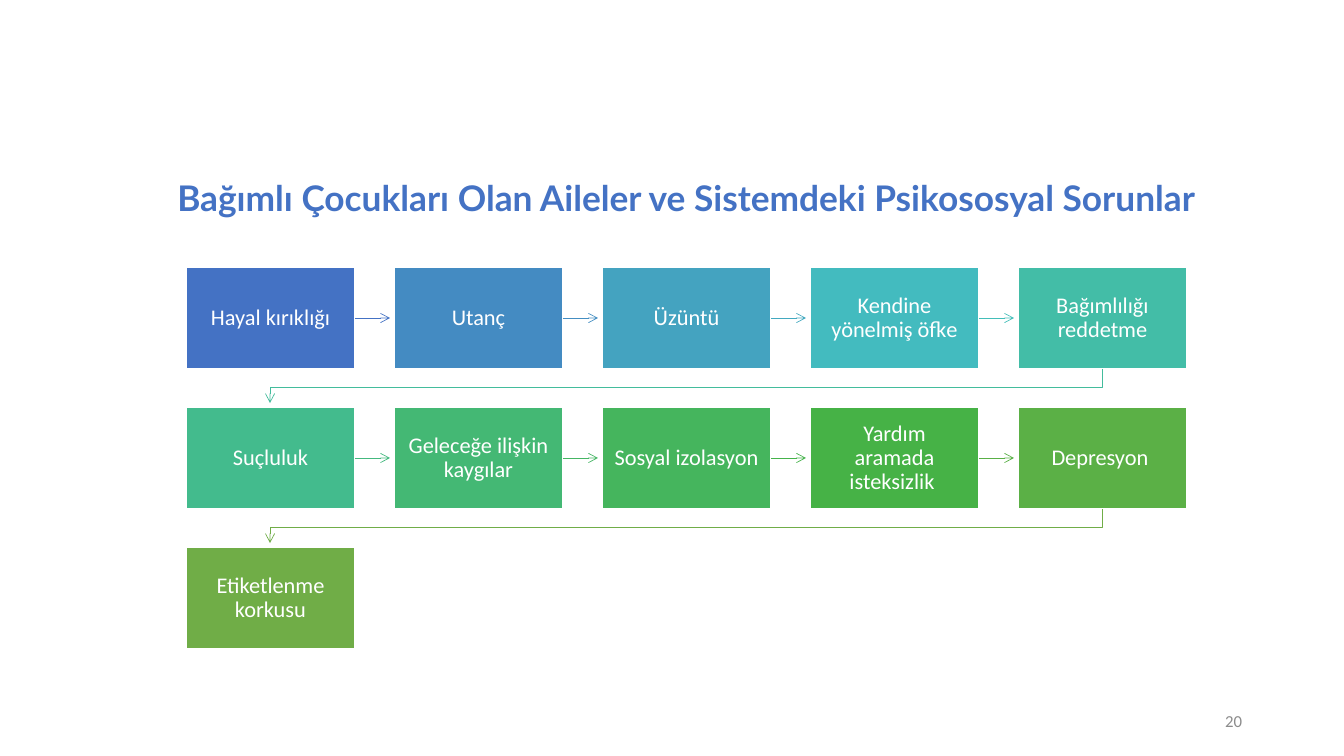
from lxml import etree
from pptx import Presentation
from pptx.dml.color import RGBColor
from pptx.enum.shapes import MSO_CONNECTOR, MSO_SHAPE
from pptx.enum.text import MSO_ANCHOR, MSO_AUTO_SIZE, PP_ALIGN
from pptx.oxml.ns import qn
from pptx.util import Pt

RECTANGLE = MSO_SHAPE.RECTANGLE
STRAIGHT = MSO_CONNECTOR.STRAIGHT
MIDDLE = MSO_ANCHOR.MIDDLE
CENTER, RIGHT = PP_ALIGN.CENTER, PP_ALIGN.RIGHT

WHITE = RGBColor(0xFF, 0xFF, 0xFF)
BLUE = RGBColor(0x44, 0x72, 0xC4)
GRAY = RGBColor(0x8C, 0x8C, 0x8C)

EMU_PER_PX = 12192000 / 1344
COLUMNS = 5
FIRST_LEFT, FIRST_TOP = 186, 267
COLUMN_STEP, ROW_STEP = 208, 140
BOX_WIDTH, BOX_HEIGHT = 169, 102
ARROW_LENGTH = 35

# Problem, box colour, colour of the arrow to the next box
PROBLEMS = [
    ("Hayal kırıklığı", BLUE, BLUE),
    ("Utanç", RGBColor(0x44, 0x8B, 0xC2), RGBColor(0x44, 0x8E, 0xC2)),
    ("Üzüntü", RGBColor(0x44, 0xA3, 0xC0), RGBColor(0x43, 0xA9, 0xC0)),
    ("Kendine yönelmiş öfke", RGBColor(0x43, 0xBB, 0xBF), RGBColor(0x43, 0xBE, 0xB9)),
    ("Bağımlılığı reddetme", RGBColor(0x43, 0xBD, 0xA7), RGBColor(0x43, 0xBC, 0x9C)),
    ("Suçluluk", RGBColor(0x43, 0xBB, 0x8D), RGBColor(0x44, 0xB9, 0x7F)),
    ("Geleceğe ilişkin kaygılar", RGBColor(0x44, 0xB8, 0x74), RGBColor(0x45, 0xB6, 0x64)),
    ("Sosyal izolasyon", RGBColor(0x45, 0xB5, 0x5D), RGBColor(0x45, 0xB3, 0x4B)),
    ("Yardım aramada isteksizlik ", RGBColor(0x46, 0xB2, 0x46), RGBColor(0x59, 0xB0, 0x46)),
    ("Depresyon ", RGBColor(0x5B, 0xB0, 0x46), RGBColor(0x70, 0xAD, 0x47)),
    ("Etiketlenme korkusu", RGBColor(0x70, 0xAD, 0x47), None),
]


def px(*lengths):
    """Turn pixel lengths into a list of EMU lengths."""
    return [round(length * EMU_PER_PX) for length in lengths]


def style_text(frame, text, font_name, size, color, alignment):
    frame.text = text
    frame.word_wrap = True
    frame.vertical_anchor = MIDDLE
    paragraph = frame.paragraphs[0]
    paragraph.alignment = alignment
    font = paragraph.runs[0].font
    font.name, font.size = font_name, Pt(size)
    font.color.rgb = color
    return paragraph


prs = Presentation()
prs.slide_width, prs.slide_height = px(1344, 756)
slide = prs.slides.add_slide(prs.slide_layouts[5])
shapes = slide.shapes

title = shapes.title
title.left, title.top, title.width, title.height = px(107, 162, 1159, 146)
heading = style_text(
    title.text_frame,
    "Bağımlı Çocukları Olan Aileler ve Sistemdeki Psikososyal Sorunlar",
    "Lato", 25.2, BLUE, CENTER)
heading.line_spacing = 0.9
heading.runs[0].font.bold = True
title.text_frame.auto_size = MSO_AUTO_SIZE.NONE
title.text_frame.margin_bottom = px(75)[0]

for index, (problem, box_color, arrow_color) in enumerate(PROBLEMS):
    row, column = divmod(index, COLUMNS)
    left = FIRST_LEFT + column * COLUMN_STEP
    top = FIRST_TOP + row * ROW_STEP

    box = shapes.add_shape(RECTANGLE, *px(left, top, BOX_WIDTH, BOX_HEIGHT))
    box.shadow.inherit = False
    box.fill.solid()
    box.fill.fore_color.rgb = box_color
    box.line.color.rgb = WHITE
    box.line.width = Pt(1)
    frame = box.text_frame
    frame.margin_left, frame.margin_right = px(11, 11)
    frame.margin_top, frame.margin_bottom = px(12, 12)
    style_text(frame, problem, "Calibri", 16, WHITE, CENTER).line_spacing = 0.9

    if arrow_color is None:
        continue
    if column < COLUMNS - 1:
        start, middle = left + BOX_WIDTH, top + BOX_HEIGHT // 2
        arrow = shapes.add_connector(
            STRAIGHT, *px(start, middle, start + ARROW_LENGTH, middle))
        etree.SubElement(arrow.element.spPr, qn("a:effectLst"))
    else:
        first_center = FIRST_LEFT + BOX_WIDTH // 2
        last_center = left + BOX_WIDTH // 2
        bend = top + 120
        builder = shapes.build_freeform(last_center, top + BOX_HEIGHT, EMU_PER_PX)
        builder.add_line_segments(
            [(last_center, bend), (first_center, bend), (first_center, top + 136)],
            close=False)
        arrow = builder.convert_to_shape()
        arrow.shadow.inherit = False
        arrow.fill.background()
    arrow.line.color.rgb = arrow_color
    arrow.line.width = Pt(0.5)
    outline = arrow.element.spPr.find(qn("a:ln"))
    etree.SubElement(outline, qn("a:tailEnd"), type="arrow")

slide_number = shapes.add_textbox(*px(950, 701, 302, 40))
style_text(slide_number.text_frame, "20", "Calibri", 12, GRAY, RIGHT)

prs.save("out.pptx")
